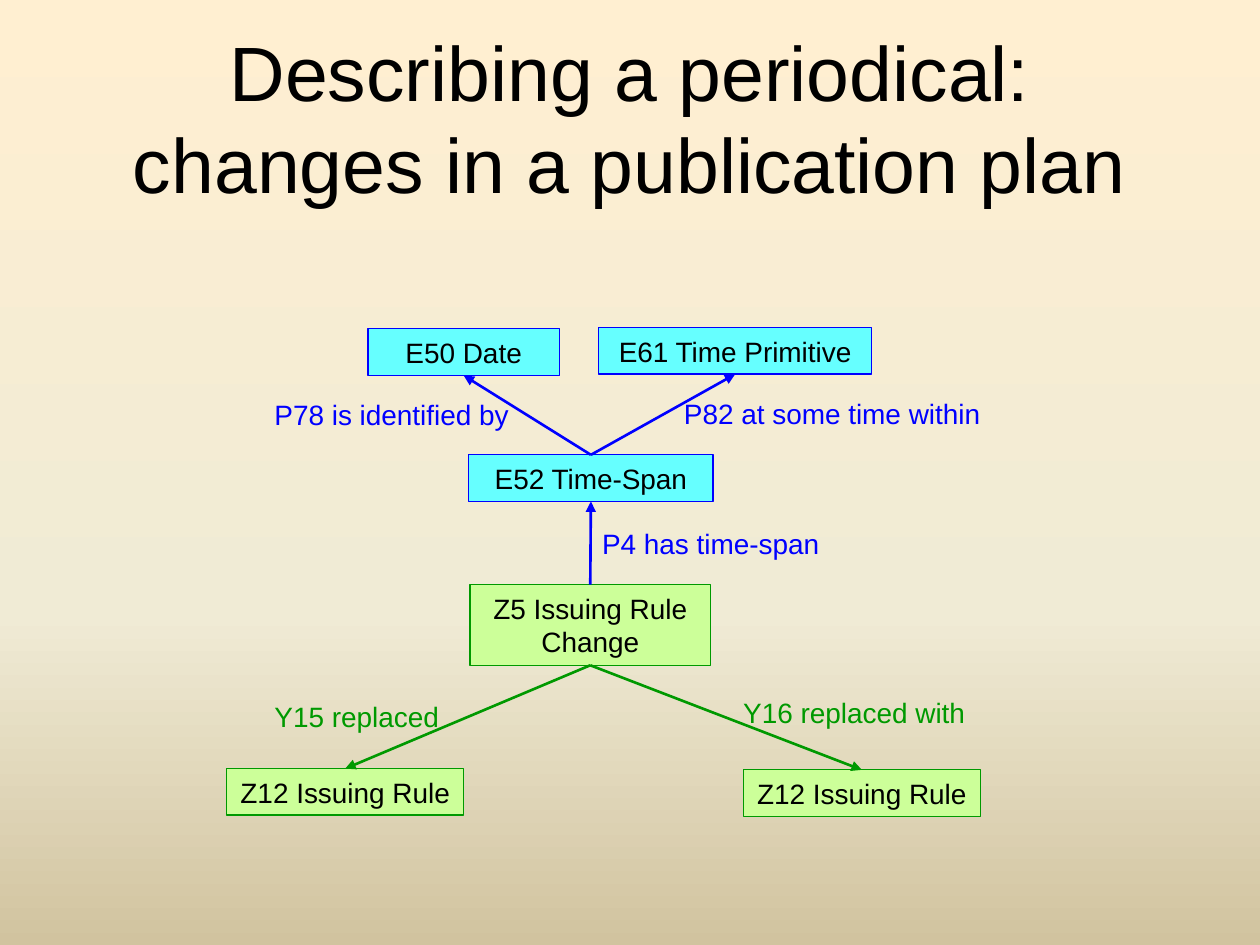
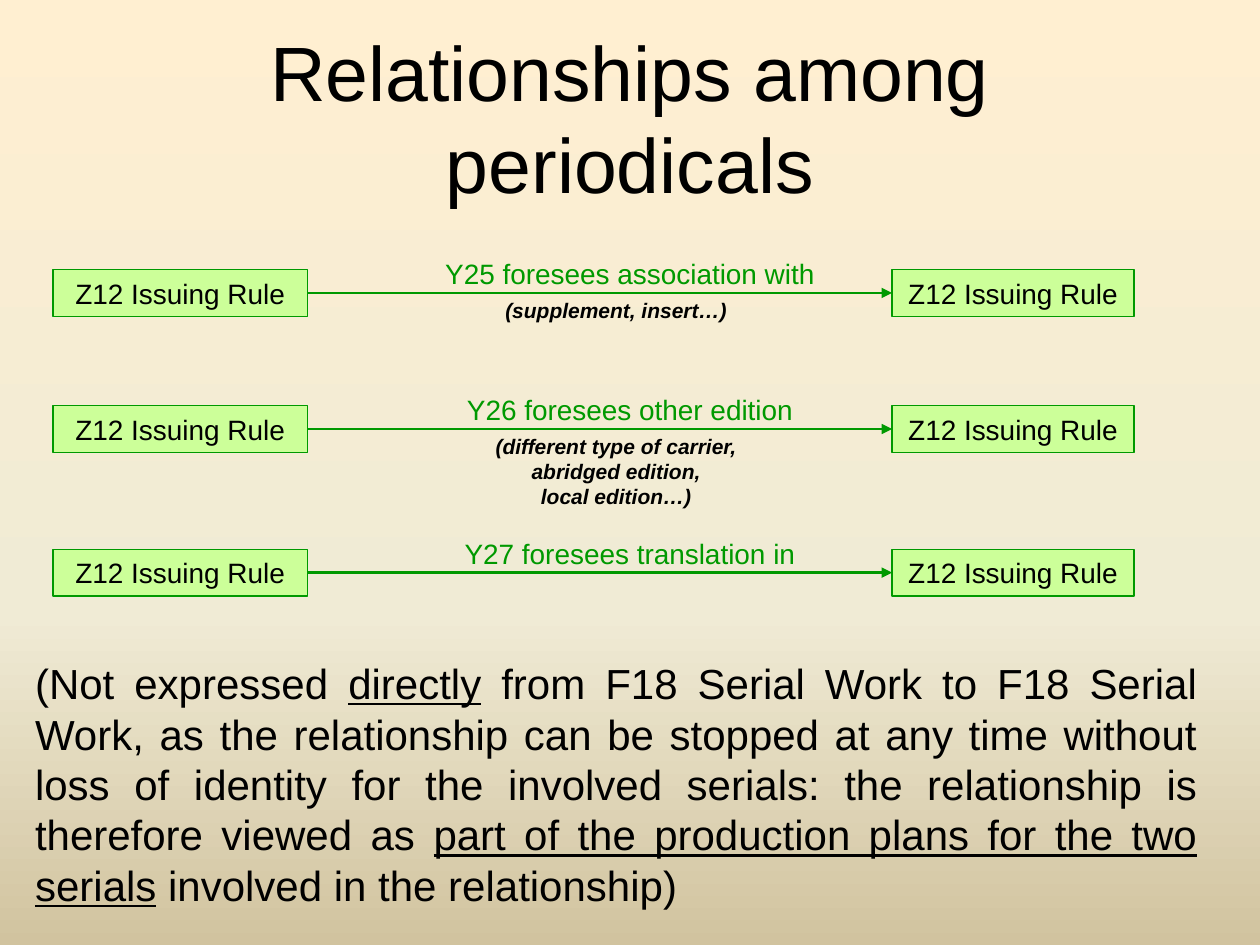
from dataclasses import dataclass

from lxml import etree
from pptx import Presentation
from pptx.dml.color import RGBColor
from pptx.enum.shapes import MSO_CONNECTOR, MSO_SHAPE
from pptx.enum.text import MSO_ANCHOR, MSO_AUTO_SIZE, PP_ALIGN
from pptx.oxml.ns import qn
from pptx.util import Inches, Pt

LEFT, MID, FULL = PP_ALIGN.LEFT, PP_ALIGN.CENTER, PP_ALIGN.JUSTIFY
RECT, LINE = MSO_SHAPE.RECTANGLE, MSO_CONNECTOR.STRAIGHT
CENTER, NO_FIT = MSO_ANCHOR.MIDDLE, MSO_AUTO_SIZE.NONE
TOP, SIDE_L, BASE, SIDE_R = range(4)  # connection sites of a rectangle

FONT = "Arial"
BLACK, GREEN, BLUE = "000000", "009900", "0000FF"
BACK = ((0, "FFEFD1"), (65, "F0EBD5"), (100, "D1C39F"))
ROW_H = 0.37


@dataclass(frozen=True)
class Kind:
    fill: str
    line: str


@dataclass(frozen=True)
class Font:
    size: int
    color: str = BLACK
    strong: bool = False  # bold and italic


@dataclass(frozen=True)
class Box:
    text: str
    kind: Kind
    left: float
    top: float
    width: float
    height: float = ROW_H


@dataclass(frozen=True)
class Label:
    text: str
    color: str
    left: float
    top: float
    width: float


@dataclass(frozen=True)
class Link:
    start: str
    start_site: int
    end: str
    end_site: int
    color: str


@dataclass(frozen=True)
class Row:
    top: float
    label: str
    note: str = ""
    note_w: float = 2


RULE = Kind("CCFF99", GREEN)
TIME = Kind("66FFFF", BLUE)
HEAD, BODY, PLAIN = Font(44), Font(24), Font(16)
NOTE = Font(12, strong=True)

# Publication plan diagram
PLAN = {
    "date": Box("E50 Date", TIME, 2.92, 2.61, 1.52),
    "prime": Box("E61 Time Primitive", TIME, 4.75, 2.6, 2.17),
    "span": Box("E52 Time-Span", TIME, 3.72, 3.61, 1.94),
    "change": Box("Z5 Issuing Rule\nChange", RULE, 3.73, 4.64, 1.91, 0.64),
    "old": Box("Z12 Issuing Rule", RULE, 1.8, 6.1, 1.88),
    "new": Box("Z12 Issuing Rule", RULE, 5.9, 6.11, 1.88),
}
LINKS = (
    Link("span", TOP, "date", BASE, BLUE),
    Link("span", TOP, "prime", BASE, BLUE),
    Link("change", TOP, "span", BASE, BLUE),
    Link("change", BASE, "old", TOP, GREEN),
    Link("change", BASE, "new", TOP, GREEN),
)
LABELS = (
    Label("P78 is identified by", BLUE, 2.08, 3.11, 2.08),
    Label("P82 at some time within", BLUE, 5.33, 3.1, 2.58),
    Label("P4 has time-span", BLUE, 4.68, 4.13, 1.95),
    Label("Y15 replaced", GREEN, 2.08, 5.5, 1.52),
    Label("Y16 replaced with", GREEN, 5.8, 5.47, 1.98),
)

# Relationship rows
ROWS = (
    Row(2.14, "Y25 foresees association with", "(supplement, insert…)"),
    Row(3.22, "Y26 foresees other edition",
        "(different type of carrier, abridged edition,\nlocal edition…)", 2.12),
    Row(4.36, "Y27 foresees translation in"),
)
LABEL_MID, LABEL_W, NOTE_MID = 5, 3.17, 4.89

# Closing remark: text and whether it is underlined
REMARK = (
    ("(Not expressed ", False),
    ("directly", True),
    (" from F18 Serial Work to F18 Serial Work, as the relationship can be "
     "stopped at any time without loss of identity for the involved serials: "
     "the relationship is therefore viewed as ", False),
    ("part of the production plans for the two serials", True),
    (" involved in the relationship)", False),
)


def rgb(code: str) -> RGBColor:
    return RGBColor.from_string(code)


def write(frame, runs, font: Font, align) -> None:
    """Fill a text frame run by run; a newline is a line break."""
    para = frame.paragraphs[0]
    para.alignment = align
    for text, under in runs:
        for i, part in enumerate(text.split("\n")):
            if i:
                para.add_line_break()
            run = para.add_run()
            run.text = part
            face = run.font
            face.name, face.size = FONT, Pt(font.size)
            face.color.rgb = rgb(font.color)
            face.bold = face.italic = font.strong
            face.underline = under


def place(shape, left: float, top: float, width: float, height: float) -> None:
    shape.left, shape.top = Inches(left), Inches(top)
    shape.width, shape.height = Inches(width), Inches(height)


def add_box(slide, box: Box):
    shape = slide.shapes.add_shape(
        RECT, Inches(box.left), Inches(box.top),
        Inches(box.width), Inches(box.height))
    shape.shadow.inherit = False
    shape.fill.solid()
    shape.fill.fore_color.rgb = rgb(box.kind.fill)
    shape.line.color.rgb = rgb(box.kind.line)
    shape.line.width = Pt(0.75)
    write(shape.text_frame, [(box.text, False)], PLAIN, MID)
    return shape


def add_text(slide, runs, font: Font, align, left: float, top: float,
             width: float, height: float = ROW_H, wrap: bool = True) -> None:
    shape = slide.shapes.add_textbox(
        Inches(left), Inches(top), Inches(width), Inches(height))
    shape.text_frame.word_wrap = wrap
    write(shape.text_frame, runs, font, align)


def add_link(slide, start, start_site: int, end, end_site: int,
             color: str) -> None:
    link = slide.shapes.add_connector(LINE, 0, 0, 0, 0)
    link.begin_connect(start, start_site)
    link.end_connect(end, end_site)
    link.line.color.rgb = rgb(color)
    link.line.width = Pt(1.5)
    props = link.element.find(qn("p:spPr"))
    etree.SubElement(props.find(qn("a:ln")), qn("a:tailEnd"), type="triangle")
    etree.SubElement(props, qn("a:effectLst"))


def paint_back(master) -> None:
    """Give the master a vertical gradient with three stops."""
    fill = master.background.fill
    fill.gradient()
    fill.gradient_angle = 270
    stops = master.element.find(".//" + qn("a:gsLst"))
    for stop in list(stops):
        stops.remove(stop)
    for pos, code in BACK:
        stop = etree.SubElement(stops, qn("a:gs"), pos=str(pos * 1000))
        etree.SubElement(stop, qn("a:srgbClr"), val=code)


def add_slide(deck, title: str):
    slide = deck.slides.add_slide(deck.slide_layouts[5])  # title only
    head = slide.shapes.title
    place(head, 0.5, 0.3, 9, 1.25)
    frame = head.text_frame
    frame.auto_size, frame.vertical_anchor = NO_FIT, CENTER
    frame.word_wrap = True
    write(frame, [(title, False)], HEAD, MID)
    return slide


def draw_plan(deck) -> None:
    slide = add_slide(
        deck, "Describing a periodical:\nchanges in a publication plan")
    boxes = {key: add_box(slide, box) for key, box in PLAN.items()}
    for link in LINKS:
        add_link(slide, boxes[link.start], link.start_site,
                 boxes[link.end], link.end_site, link.color)
    for label in LABELS:
        add_text(slide, [(label.text, False)], Font(16, label.color), LEFT,
                 label.left, label.top, label.width, wrap=False)


def draw_rows(deck) -> None:
    slide = add_slide(deck, "Relationships among periodicals")
    for row in ROWS:
        start, end = (
            add_box(slide, Box("Z12 Issuing Rule", RULE, left, row.top, width))
            for left, width in ((0.42, 2.02), (7.08, 1.92)))
        add_link(slide, start, SIDE_R, end, SIDE_L, GREEN)
        add_text(slide, [(row.label, False)], Font(16, GREEN), MID,
                 LABEL_MID - LABEL_W / 2, row.top - 0.15, LABEL_W)
        if row.note:
            height = 0.3 if row.note_w == 2 else 0.71
            add_text(slide, [(row.note, False)], NOTE, MID,
                     NOTE_MID - row.note_w / 2, row.top + 0.17,
                     row.note_w, height)
    add_text(slide, REMARK, BODY, FULL, 0.18, 5.17, 9.42, 2.12)


def main() -> None:
    deck = Presentation()
    deck.slide_width, deck.slide_height = Inches(10), Inches(7.5)
    paint_back(deck.slide_master)
    draw_plan(deck)
    draw_rows(deck)
    deck.save("out.pptx")


if __name__ == "__main__":
    main()
